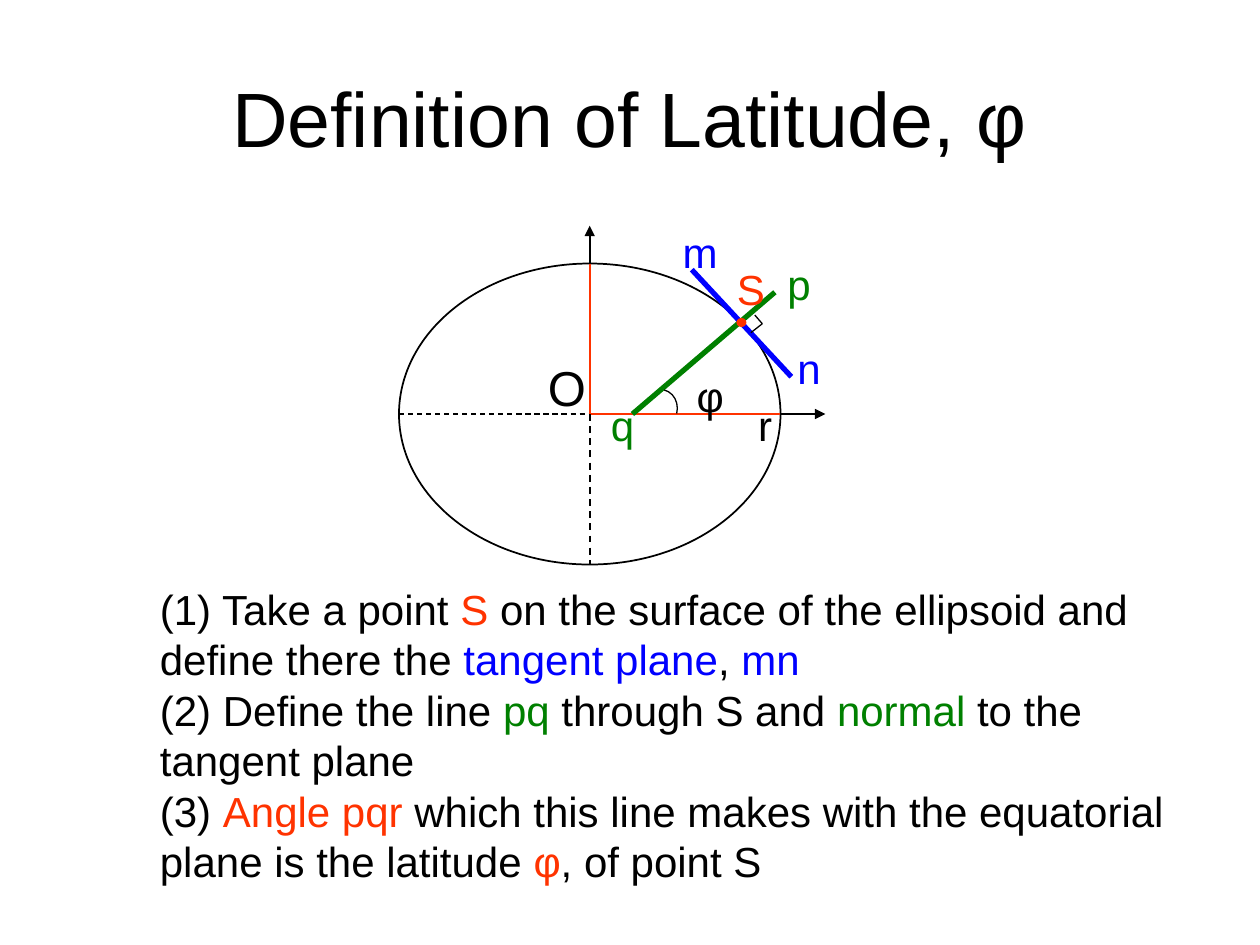
from dataclasses import dataclass
from typing import Optional

from lxml import etree
from pptx import Presentation
from pptx.dml.color import RGBColor
from pptx.enum.dml import MSO_LINE
from pptx.enum.shapes import MSO_CONNECTOR, MSO_SHAPE
from pptx.enum.text import MSO_ANCHOR, MSO_AUTO_SIZE, PP_ALIGN
from pptx.oxml.ns import qn
from pptx.util import Pt

STRAIGHT = MSO_CONNECTOR.STRAIGHT
OVAL, ARC = MSO_SHAPE.OVAL, MSO_SHAPE.ARC
DASH = MSO_LINE.DASH
LEFT, CENTER = PP_ALIGN.LEFT, PP_ALIGN.CENTER
TOP, MIDDLE = MSO_ANCHOR.TOP, MSO_ANCHOR.MIDDLE
NO_FIT = MSO_AUTO_SIZE.NONE


@dataclass(frozen=True)
class Theme:
    font: str = "Arial"
    black: str = "000000"
    red: str = "FF3300"
    blue: str = "0000FF"
    green: str = "008000"
    title: float = 44
    origin: float = 28
    text: float = 24
    thin: float = 0.75
    normal: float = 1
    thick: float = 3


THEME = Theme()


@dataclass(frozen=True)
class Line:
    start: tuple[float, float]
    end: tuple[float, float]
    color: str = THEME.black
    width: float = THEME.normal
    dashed: bool = False
    arrow: bool = False


@dataclass(frozen=True)
class Label:
    text: str
    left: float
    top: float
    width: float
    color: str = THEME.black
    size: float = THEME.text


# Ellipsoid geometry, in points
X, Y = 337, 236.6
RADIUS_X, RADIUS_Y = 109, 86
S_POINT = (423.7, 184.3)
Q_POINT = (361.4, Y)
CORNER = (435.6, 185)

AXES = [
    Line((X - RADIUS_X, Y), (X, Y), width=THEME.thin, dashed=True),
    Line((X + RADIUS_X, Y), (471.6, Y), arrow=True),
    Line((X, Y), (X, 129), arrow=True),
    Line((X, Y), (X + RADIUS_X, Y), THEME.red),
    Line((X, Y - RADIUS_Y), (X, Y), THEME.red),
    Line((X, Y), (X, Y + RADIUS_Y), dashed=True),
]
TANGENT_AND_NORMAL = [
    Line((395.3, 154.1), (452.2, 215.3), THEME.blue, THEME.thick),
    Line((442.8, 167), Q_POINT, THEME.green, THEME.thick),
]
RIGHT_ANGLE = [
    Line((431.3, 180), CORNER, width=THEME.thin),
    Line(CORNER, (429.1, 190.1), width=THEME.thin),
]
LABELS = [
    Label("O", 306, 200.9, 36, size=THEME.origin),
    Label("φ", 391, 208.1, 27.4),
    Label("S", 414, 146.9, 28.1, THEME.red),
    Label("m", 383, 126, 33.1, THEME.blue),
    Label("n", 448.6, 192.2, 26.6, THEME.blue),
    Label("q", 342, 224.6, 26.6, THEME.green),
    Label("p", 442.8, 144, 26.6, THEME.green),
    Label("r", 426.2, 224.6, 22.3),
]

# Each paragraph is a list of (text, color) spans
STEPS = [
    [("(1) Take a point ", THEME.black), ("S", THEME.red),
     (" on the surface of the ellipsoid and define there the ", THEME.black),
     ("tangent plane", THEME.blue), (", ", THEME.black), ("mn", THEME.blue)],
    [("(2) Define the line ", THEME.black), ("pq", THEME.green),
     (" through S and ", THEME.black), ("normal", THEME.green),
     (" to the", THEME.black)],
    [("tangent plane", THEME.black)],
    [("(3) ", THEME.black), ("Angle pqr", THEME.red),
     (" which this line makes with the equatorial", THEME.black)],
    [("plane is the latitude ", THEME.black), ("φ", THEME.red),
     (", of point S", THEME.black)],
]


def place(shape, left: float, top: float, width: float, height: float) -> None:
    shape.left, shape.top = Pt(left), Pt(top)
    shape.width, shape.height = Pt(width), Pt(height)


def write(frame, paragraphs, *, size: float = THEME.text, align=LEFT,
          anchor=TOP, wrap: bool = True) -> None:
    """Fill a text frame with paragraphs of colored spans, without bullets."""
    frame.word_wrap = wrap
    frame.auto_size = NO_FIT
    frame.vertical_anchor = anchor
    for index, spans in enumerate(paragraphs):
        para = frame.add_paragraph() if index else frame.paragraphs[0]
        para.alignment = align
        para.space_before = para.space_after = Pt(0)
        properties = para._p.get_or_add_pPr()
        properties.set("marL", "0")
        properties.set("indent", "0")
        etree.SubElement(properties, qn("a:buNone"))
        for text, color in spans:
            span = para.add_run()
            span.text = text
            span.font.name = THEME.font
            span.font.size = Pt(size)
            span.font.color.rgb = RGBColor.from_string(color)


def draw_line(page, line: Line) -> None:
    connector = page.shapes.add_connector(
        STRAIGHT, *(Pt(value) for value in (*line.start, *line.end)))
    connector.line.color.rgb = RGBColor.from_string(line.color)
    connector.line.width = Pt(line.width)
    if line.dashed:
        connector.line.dash_style = DASH
    if line.arrow:
        outline = connector.line._get_or_add_ln()
        etree.SubElement(outline, qn("a:tailEnd"), type="triangle")
    etree.SubElement(connector._element.spPr, qn("a:effectLst"))


def draw_round(page, kind, center: tuple[float, float], radius_x: float,
               radius_y: float, *, fill: Optional[str] = None,
               color: str = THEME.black, width: float = THEME.thin,
               rotation: float = 0) -> None:
    """Draw an ellipse or arc around its center."""
    x, y = center
    shape = page.shapes.add_shape(
        kind, Pt(x - radius_x), Pt(y - radius_y),
        Pt(2 * radius_x), Pt(2 * radius_y))
    shape.shadow.inherit = False
    shape.rotation = rotation
    if fill:
        shape.fill.solid()
        shape.fill.fore_color.rgb = RGBColor.from_string(fill)
    else:
        shape.fill.background()
    shape.line.color.rgb = RGBColor.from_string(color)
    shape.line.width = Pt(width)


def draw_label(page, label: Label) -> None:
    box = page.shapes.add_textbox(
        Pt(label.left), Pt(label.top), Pt(label.width), Pt(label.size * 1.5))
    write(box.text_frame, [[(label.text, label.color)]],
          size=label.size, wrap=False)


def main() -> None:
    deck = Presentation()
    deck.slide_width, deck.slide_height = Pt(720), Pt(540)
    page = deck.slides.add_slide(deck.slide_layouts[1])

    # Title and the three steps
    title, body = page.shapes.title, page.placeholders[1]
    place(title, 36, 21.6, 648, 90)
    write(title.text_frame, [[("Definition of Latitude, φ", THEME.black)]],
          size=THEME.title, align=CENTER, anchor=MIDDLE)
    place(body, 84.2, 329.8, 617.8, 180)
    write(body.text_frame, STEPS)

    # Ellipsoid with axes, tangent and normal
    draw_round(page, OVAL, (X, Y), RADIUS_X, RADIUS_Y, width=THEME.normal)
    for line in AXES + TANGENT_AND_NORMAL:
        draw_line(page, line)

    # Point S, right angle and latitude angle
    draw_round(page, OVAL, S_POINT, 2.5, 2.2, fill=THEME.red, color=THEME.red)
    for line in RIGHT_ANGLE:
        draw_line(page, line)
    draw_round(page, ARC, (377, 234), 10, 11.4, rotation=13.3)

    for label in LABELS:
        draw_label(page, label)
    deck.save("out.pptx")


if __name__ == "__main__":
    main()
